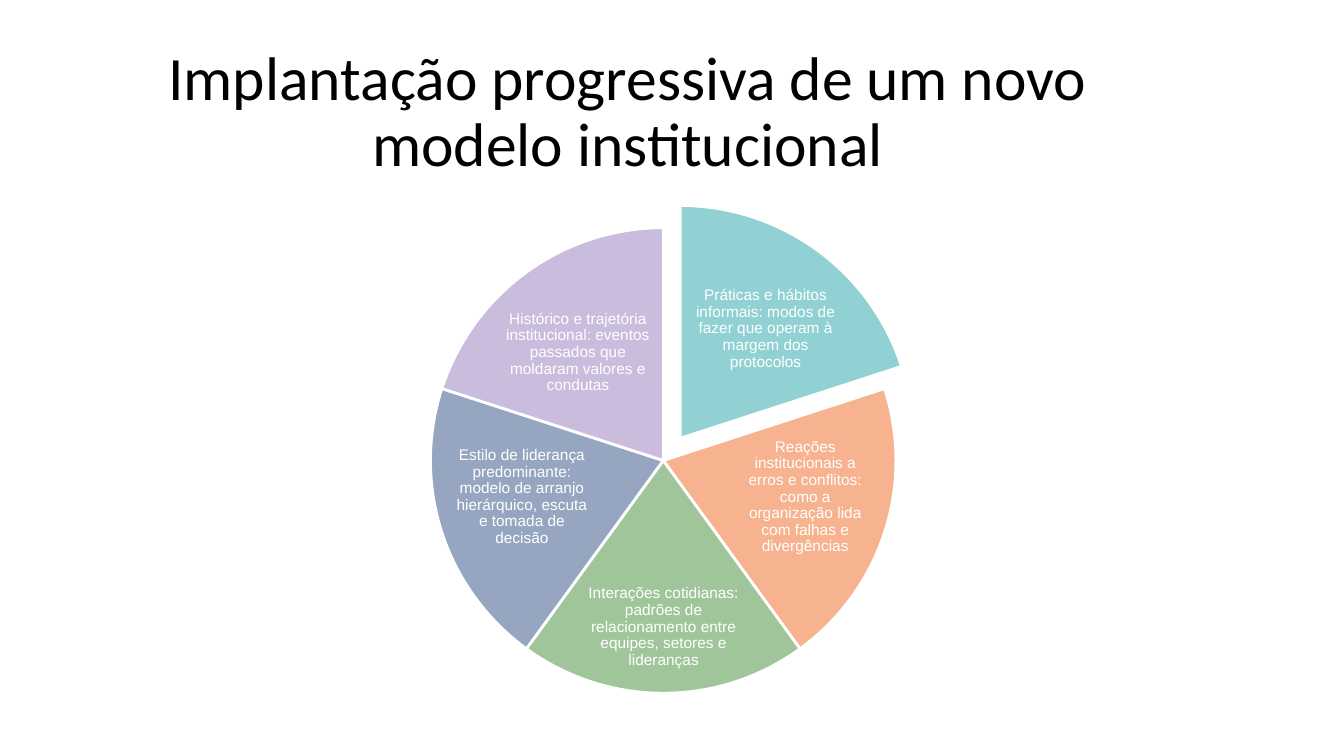
import pptx
import pptx.util
import pptx.dml.color
import pptx.enum.shapes
import pptx.enum.text

Cm = pptx.util.Cm
Pt = pptx.util.Pt
RGBColor = pptx.dml.color.RGBColor

BLACK = RGBColor(0x00, 0x00, 0x00)
WHITE = RGBColor(0xFF, 0xFF, 0xFF)
TEAL = RGBColor(0x91, 0xD1, 0xD3)
ORANGE = RGBColor(0xF7, 0xB2, 0x8F)
GREEN = RGBColor(0xA0, 0xC5, 0x9B)
BLUE = RGBColor(0x96, 0xA5, 0xC0)
LILAC = RGBColor(0xC9, 0xBC, 0xDD)

PIE_LEFT, PIE_TOP, PIE_SIZE = 10.85, 5.74, 11.73
PULL_X, PULL_Y = 0.43, -0.56
ADJ_PER_DEGREE = 0.6

SECTORS = [
    ("Práticas e hábitos informais: modos de fazer que operam à margem dos protocolos",
     TEAL, (17.3, 6.93, 3.99, 2.72)),
    ("Reações institucionais a erros e conflitos: como a organização lida com falhas e divergências",
     ORANGE, (18.54, 11.05, 3.51, 2.95)),
    ("Interações cotidianas: padrões de relacionamento entre equipes, setores e lideranças",
     GREEN, (14.63, 14.55, 4.19, 2.51)),
    ("Estilo de liderança predominante: modelo de arranjo hierárquico, escuta e tomada de decisão",
     BLUE, (11.4, 11.05, 3.51, 2.95)),
    ("Histórico e trajetória institucional: eventos passados que moldaram valores e condutas",
     LILAC, (12.57, 7.52, 3.99, 2.72)),
]


def write_text(tf, text, font, size, color):
    tf.word_wrap = True
    tf.auto_size = pptx.enum.text.MSO_AUTO_SIZE.NONE
    tf.vertical_anchor = pptx.enum.text.MSO_ANCHOR.MIDDLE
    p = tf.paragraphs[0]
    p.alignment = pptx.enum.text.PP_ALIGN.CENTER
    p.line_spacing = 0.9
    p.space_before = Pt(0)
    r = p.add_run()
    r.text = text
    r.font.name = font
    r.font.size = Pt(size)
    r.font.color.rgb = color


def set_title(slide, text):
    sp = slide.shapes.title
    sp.left, sp.top, sp.width, sp.height = Cm(2.34), Cm(1.02), Cm(26.97), Cm(3.68)
    write_text(sp.text_frame, text, "Calibri", 44, BLACK)


def add_sector(shapes, left, top, start, sweep, color):
    sp = shapes.add_shape(pptx.enum.shapes.MSO_SHAPE.PIE,
                          Cm(left), Cm(top), Cm(PIE_SIZE), Cm(PIE_SIZE))
    sp.adjustments[0] = start % 360 * ADJ_PER_DEGREE
    sp.adjustments[1] = (start + sweep) % 360 * ADJ_PER_DEGREE
    sp.shadow.inherit = False
    sp.fill.solid()
    sp.fill.fore_color.rgb = color
    sp.line.color.rgb = WHITE
    sp.line.width = Pt(2)


def add_label(shapes, text, box):
    sp = shapes.add_textbox(*[Cm(v) for v in box])
    tf = sp.text_frame
    tf.margin_left = tf.margin_right = tf.margin_top = tf.margin_bottom = Cm(0.04)
    write_text(tf, text, "Arial", 11, WHITE)


def add_pie(slide):
    shapes = slide.shapes.add_group_shape().shapes
    sweep = 360 // len(SECTORS)
    for i, (text, color, box) in enumerate(SECTORS):
        dx, dy = (PULL_X, PULL_Y) if i == 0 else (0, 0)
        add_sector(shapes, PIE_LEFT + dx, PIE_TOP + dy, 270 + i * sweep, sweep, color)
        add_label(shapes, text, box)


def main():
    prs = pptx.Presentation()
    prs.slide_width, prs.slide_height = Cm(33.87), Cm(19.05)
    slide = prs.slides.add_slide(prs.slide_layouts[5])
    set_title(slide, "Implantação progressiva de um novo modelo institucional")
    add_pie(slide)
    prs.save("out.pptx")


if __name__ == "__main__":
    main()
